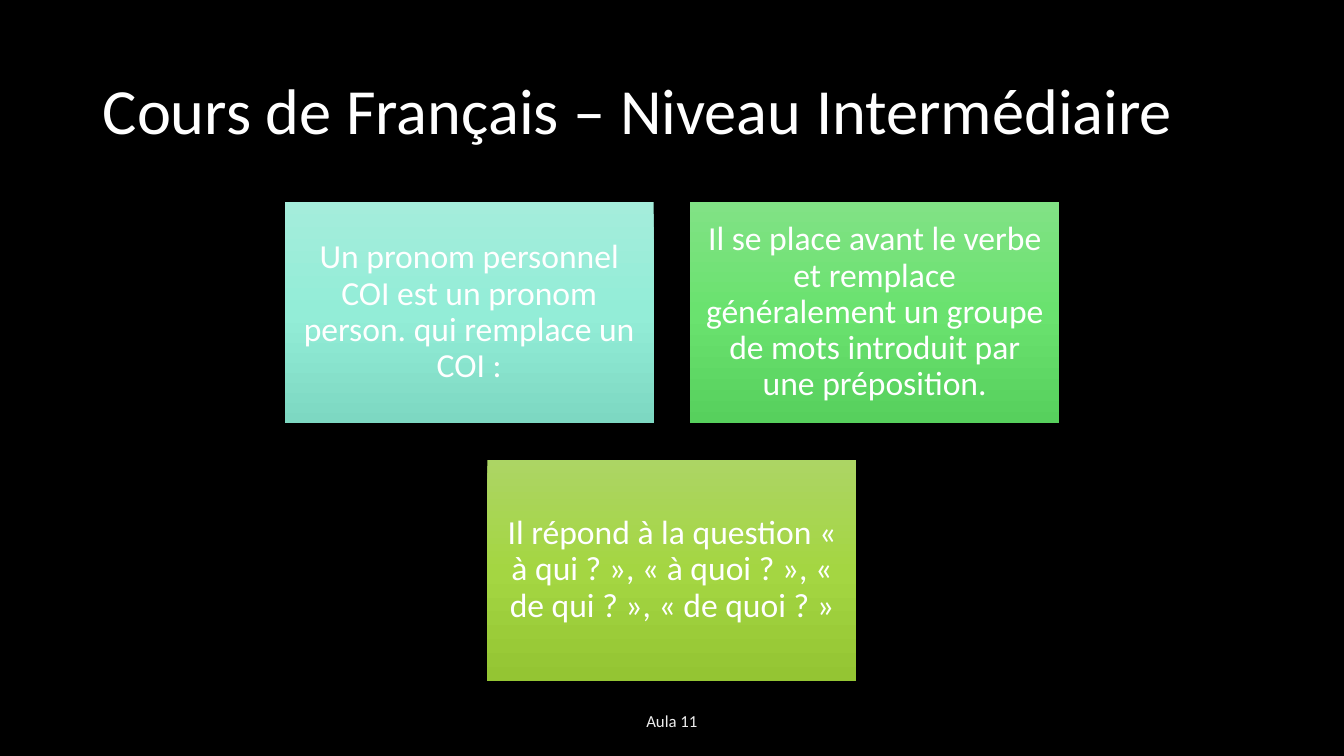
from copy import deepcopy
from pptx import Presentation
from pptx.dml.color import RGBColor as Rgb
from pptx.enum.shapes import MSO_SHAPE as Shape
from pptx.enum.text import MSO_ANCHOR as Anchor, MSO_AUTO_SIZE as Fit, PP_ALIGN as Align
from pptx.util import Cm, Pt

WIDE, HIGH = 33.87, 19.05
COLORS = {
    "back": "000000",
    "text": "FFFFFF",
    "foot": "EDEDED",
    "mint": ("A4EDDB", "93EDD7", "7DD8C2"),
    "green": ("81E285", "6AE26F", "57D05D"),
    "lime": ("ACD564", "A4D642", "94C533"),
}


def write(shape, text, size, color="text", align=Align.CENTER, pad=0.25, line=0.9):
    frame = shape.text_frame
    frame.word_wrap = True
    frame.auto_size = Fit.NONE
    frame.vertical_anchor = Anchor.MIDDLE
    frame.margin_left = frame.margin_right = Cm(0.25)
    frame.margin_top = frame.margin_bottom = Cm(pad)
    para = frame.paragraphs[0]
    para.alignment = align
    para.line_spacing = line
    run = para.add_run()
    run.text = text
    run.font.name = "Calibri"
    run.font.size = Pt(size)
    run.font.color.rgb = Rgb.from_string(COLORS[color])


deck = Presentation()
deck.slide_width, deck.slide_height = Cm(WIDE), Cm(HIGH)
slide = deck.slides.add_slide(deck.slide_layouts[5])
slide.background.fill.solid()
slide.background.fill.fore_color.rgb = Rgb.from_string(COLORS["back"])

title = slide.shapes.title
title.left, title.top, title.width, title.height = Cm(2.34), Cm(1.02), Cm(29.21), Cm(3.68)
write(title, "Cours de Français – Niveau Intermédiaire", 46, align=Align.LEFT, pad=0.13)

foot = slide.shapes.add_textbox(Cm(11.22), Cm(17.65), Cm(11.43), Cm(1.02))
write(foot, "Aula 11", 12, color="foot", pad=0.13, line=1.0)

box_w, box_h, gap, top = 9.3, 5.57, 0.92, 5.09
cards = [
    ("mint", -0.5, 0, "Un pronom personnel COI est un pronom person. qui remplace un COI :"),
    ("green", 0.5, 0, "Il se place avant le verbe et remplace généralement un groupe de mots introduit par une préposition."),
    ("lime", 0, 1, "Il répond à la question « à qui ? », « à quoi ? », « de qui ? », « de quoi ? »"),
]
for tint, col, row, text in cards:
    left = (WIDE - box_w) / 2 + col * (box_w + gap)
    card = slide.shapes.add_shape(
        Shape.RECTANGLE, Cm(left), Cm(top + row * (box_h + gap)), Cm(box_w), Cm(box_h))
    card.shadow.inherit = False
    card.line.fill.background()
    card.fill.gradient()
    card.fill.gradient_angle = 270
    stops = card._element.xpath(".//a:gsLst")[0]
    stops.append(deepcopy(stops[0]))
    for stop, place, color in zip(card.fill.gradient_stops, (0, 0.5, 1), COLORS[tint]):
        stop.position = place
        stop.color.rgb = Rgb.from_string(color)
    write(card, text, 24)

deck.save("out.pptx")
